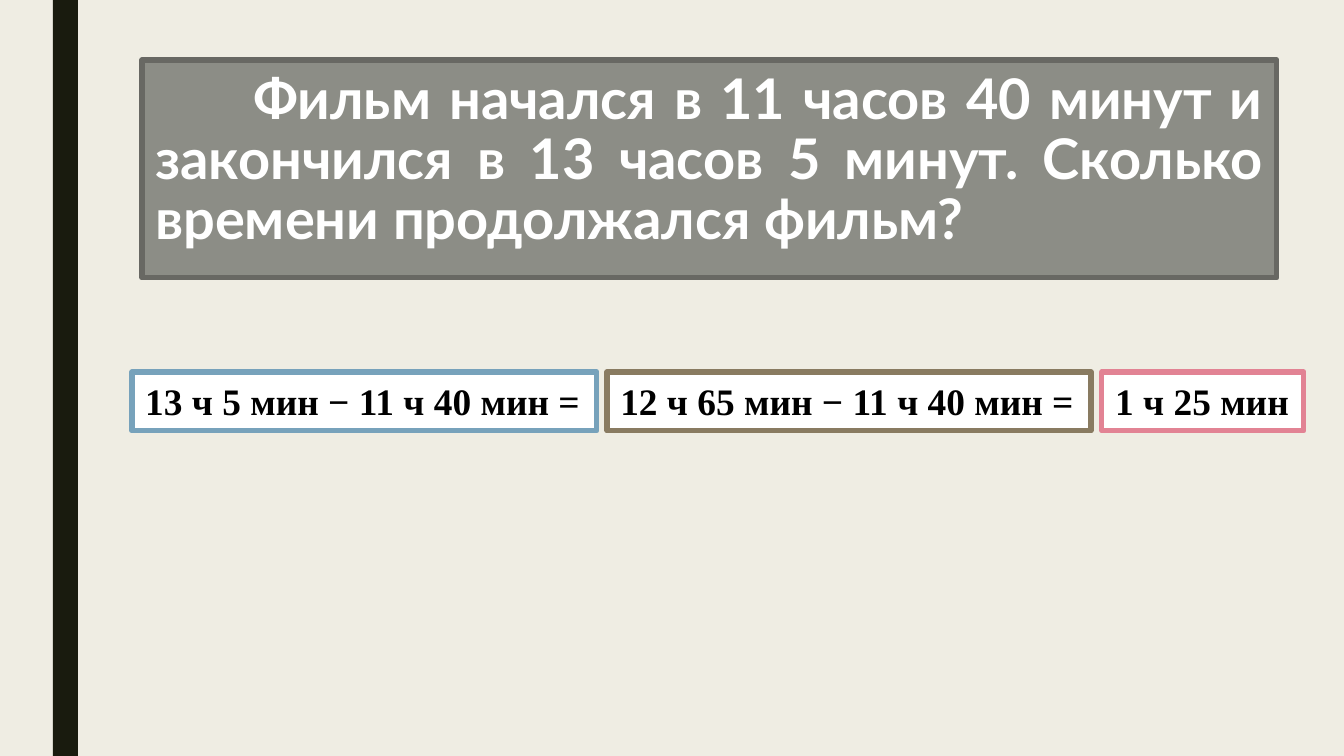
from pptx import Presentation
from pptx.dml.color import RGBColor
from pptx.enum.shapes import MSO_SHAPE
from pptx.enum.text import MSO_ANCHOR, PP_ALIGN
from pptx.util import Emu, Pt

EMU_PER_PX = 914400 / 134.4
COLORS = {
    "background": "EFEDE3",
    "stripe": "191B0E",
    "task": "8C8D86",
    "task_line": "686863",
    "white": "FFFFFF",
    "black": "000000",
    "blue": "77A2BB",
    "brown": "897B61",
    "pink": "E28394",
}


def px(length):
    return Emu(round(length * EMU_PER_PX))


def color(name):
    return RGBColor.from_string(COLORS[name])


def add_box(page, left, top, width, height, fill, line=None):
    box = page.shapes.add_shape(
        MSO_SHAPE.RECTANGLE, px(left), px(top), px(width), px(height))
    box.shadow.inherit = False
    box.fill.solid()
    box.fill.fore_color.rgb = color(fill)
    if line:
        box.line.color.rgb = color(line)
        box.line.width = Pt(2.75)
    else:
        box.line.fill.background()
    return box


def write(box, text, font, size, ink, align=PP_ALIGN.LEFT, wrap=False):
    frame = box.text_frame
    frame.word_wrap = wrap
    frame.vertical_anchor = MSO_ANCHOR.TOP
    para = frame.paragraphs[0]
    para.alignment = align
    span = para.add_run()
    span.text = text
    span.font.name = font
    span.font.size = Pt(size)
    span.font.bold = True
    span.font.color.rgb = color(ink)
    return para


def add_task(page, text):
    box = add_box(page, 142, 60, 1135, 218, "task", "task_line")
    para = write(box, text, "Lato", 30, "white", PP_ALIGN.JUSTIFY, wrap=True)
    para.line_spacing = 0.89
    # First-line indent
    para._p.get_or_add_pPr().set("indent", str(px(98)))
    box.text_frame.margin_top = px(12)


def add_step(page, left, width, line, text):
    box = add_box(page, left, 372, width, 59, "white", line)
    write(box, text, "Times New Roman", 20, "black")


def main():
    deck = Presentation()
    deck.slide_width, deck.slide_height = px(1344), px(756)
    page = deck.slides.add_slide(deck.slide_layouts[6])

    # Background and side stripe
    page.background.fill.solid()
    page.background.fill.fore_color.rgb = color("background")
    add_box(page, 53, 0, 25, 756, "stripe")

    # Problem
    add_task(page, "Фильм начался в 11 часов 40 минут и закончился "
                   "в 13 часов 5 минут. Сколько времени продолжался фильм?")

    # Solution steps
    steps = [
        (132, 465, "blue", "13 ч 5 мин − 11 ч 40 мин ="),
        (607, 484, "brown", "12 ч 65 мин − 11 ч 40 мин ="),
        (1102, 202, "pink", "1 ч 25 мин"),
    ]
    for step in steps:
        add_step(page, *step)

    deck.save("out.pptx")


if __name__ == "__main__":
    main()
